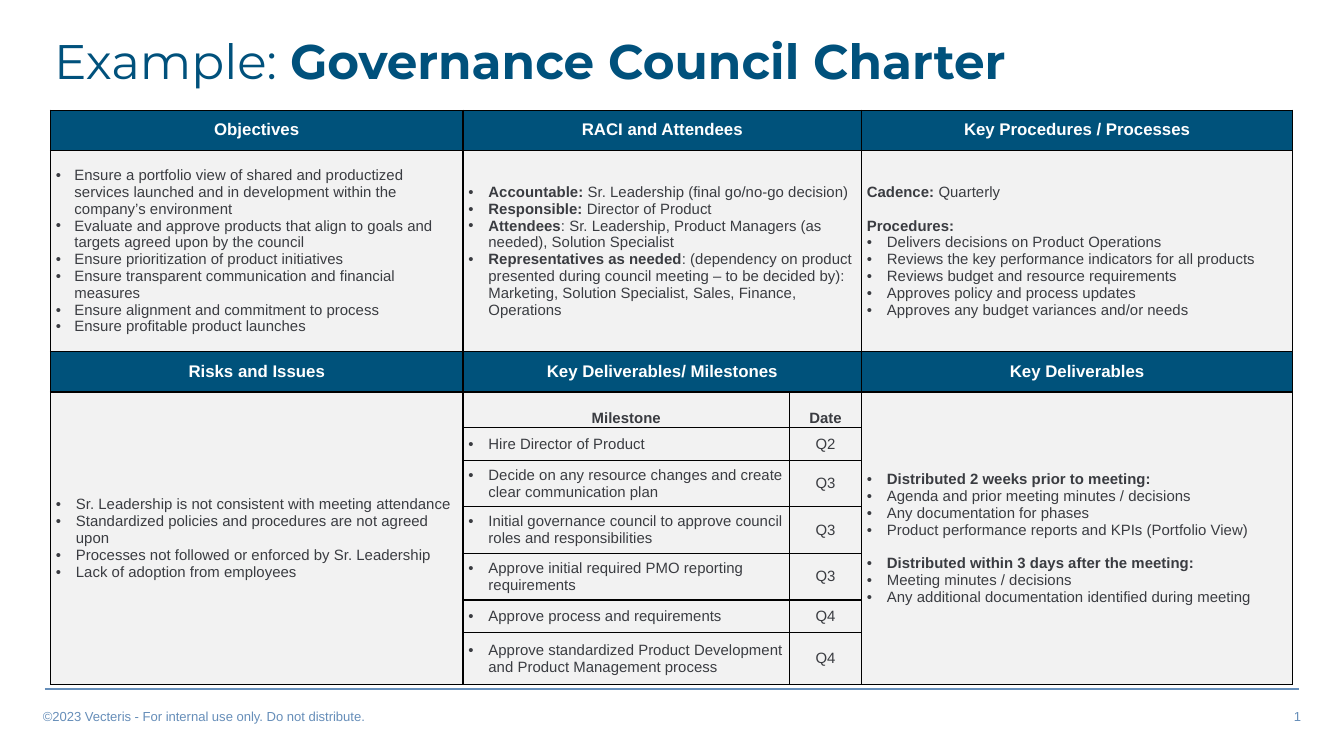
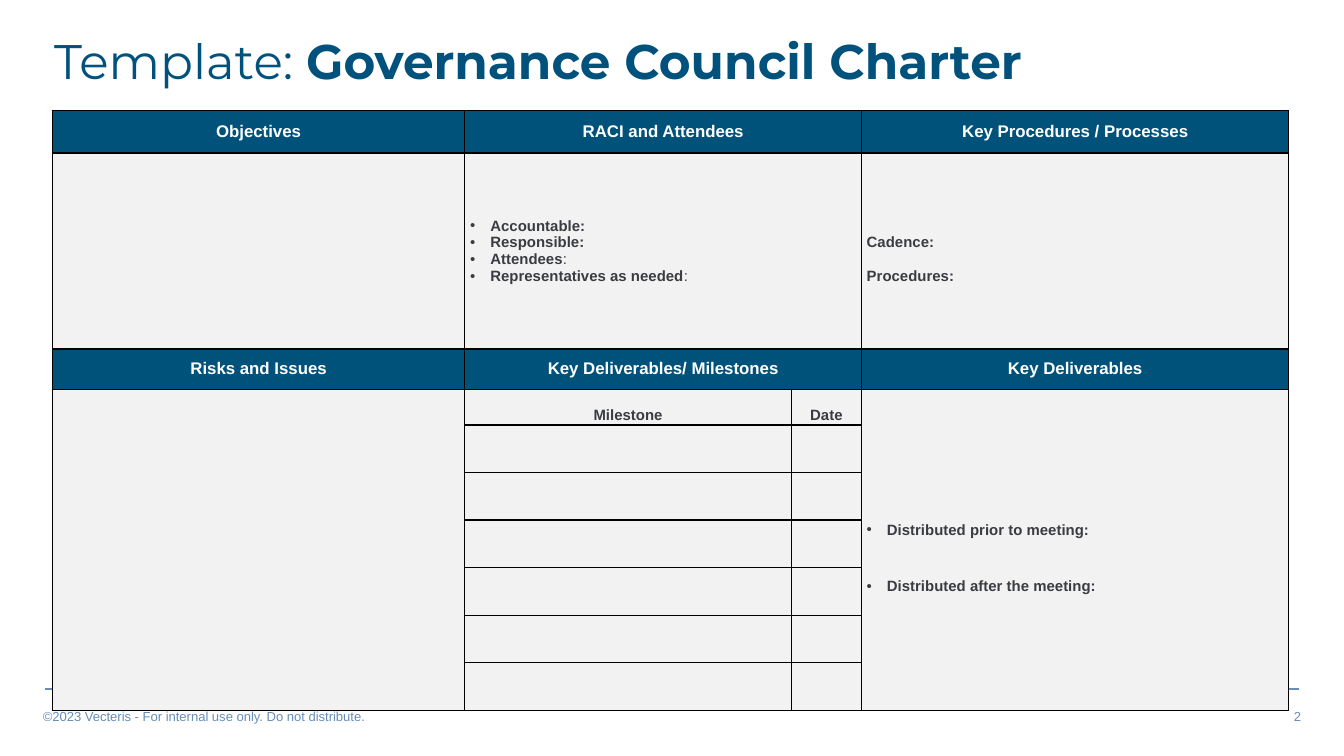
"""Builds a filled governance council charter and its blank template."""
import pptx
import pptx.util
import pptx.dml.color
import pptx.enum.shapes
import pptx.enum.text
import pptx.oxml
import pptx.oxml.ns
from lxml import etree

Pt = pptx.util.Pt
RGBColor = pptx.dml.color.RGBColor
ALIGN = pptx.enum.text.PP_ALIGN
ANCHOR = pptx.enum.text.MSO_ANCHOR
qn = pptx.oxml.ns.qn

TITLE = RGBColor(0x00, 0x51, 0x7C)
BAND = RGBColor(0x00, 0x52, 0x7B)
RULE = RGBColor(0x66, 0x8E, 0xB9)
BODY = RGBColor(0xF2, 0xF2, 0xF2)
INK = RGBColor(0x3A, 0x3C, 0x41)
WHITE = RGBColor(0xFF, 0xFF, 0xFF)
BLACK = RGBColor(0x00, 0x00, 0x00)

FOOTER = "©2023 Vecteris - For internal use only. Do not distribute."
BANDS = {
    0: ["Objectives", "RACI and Attendees", "Key Procedures / Processes"],
    2: ["Risks and Issues", "Key Deliverables/ Milestones", "Key Deliverables"],
}
COLUMNS = [0, 1, 3]
INSET = 2.88
HANG = 10.8


def add_run(p, text, size, color, bold=False, font="Arial"):
    r = p.add_run()
    r.text = text
    r.font.size = Pt(size)
    r.font.name = font
    r.font.bold = bold
    r.font.color.rgb = color


def write_cell(cell, paras, hang=0, align=ALIGN.LEFT):
    """Each paragraph is (bold text, plain text, bulleted, space before)."""
    tf = cell.text_frame
    for i, (bold, plain, bulleted, gap) in enumerate(paras):
        p = tf.paragraphs[0] if i == 0 else tf.add_paragraph()
        p.alignment = align
        if gap:
            p.space_before = Pt(gap)
        if bulleted:
            pPr = p._p.get_or_add_pPr()
            pPr.set("marL", str(Pt(hang)))
            pPr.set("indent", str(-Pt(hang)))
            clr = etree.SubElement(pPr, qn("a:buClr"))
            etree.SubElement(clr, qn("a:srgbClr")).set("val", str(INK))
            etree.SubElement(pPr, qn("a:buFont")).set("typeface", "Arial")
            etree.SubElement(pPr, qn("a:buChar")).set("char", "•")
        if bold:
            add_run(p, bold, 8, INK, True)
        if plain:
            add_run(p, plain, 8, INK)


charters = [
    {
        "title": "Example: ",
        "title_width": 551.5,
        "left": 27,
        "widths": [221, 175, 38.5, 231],
        "heights": [21.5, 108, 21.5, 18, 17.5, 23.5, 23.5, 23.5, 17.5, 28],
        "objectives": [("", text, True, 0) for text in [
            "Ensure a portfolio view of shared and productized services launched "
            "and in development within the company’s environment",
            "Evaluate and approve products that align to goals and targets agreed "
            "upon by the council",
            "Ensure prioritization of product initiatives",
            "Ensure transparent communication and financial measures",
            "Ensure alignment and commitment to process",
            "Ensure profitable product launches",
        ]],
        "raci": [
            ("Accountable: ", "Sr. Leadership (final go/no-go decision)", True, 0),
            ("Responsible: ", "Director of Product", True, 0),
            ("Attendees", ": Sr. Leadership, Product Managers (as needed), "
             "Solution Specialist", True, 0),
            ("Representatives as needed", ": (dependency on product presented "
             "during council meeting – to be decided by): Marketing, Solution "
             "Specialist, Sales, Finance, Operations", True, 0),
        ],
        "procedures": [
            ("Cadence: ", "Quarterly", False, 0),
            ("Procedures:", "", False, 9),
            ("", "Delivers decisions on Product Operations", True, 0),
            ("", "Reviews the key performance indicators for all products", True, 0),
            ("", "Reviews budget and resource requirements", True, 0),
            ("", "Approves policy and process updates", True, 0),
            ("", "Approves any budget variances and/or needs", True, 0),
        ],
        "risks": [("", text, True, 0) for text in [
            "Sr. Leadership is not consistent with meeting attendance",
            "Standardized policies and procedures are not agreed upon",
            "Processes not followed or enforced by Sr. Leadership",
            "Lack of adoption from employees",
        ]],
        "deliverables": [
            ("Distributed 2 weeks prior to meeting:", "", True, 0),
            ("", "Agenda and prior meeting minutes / decisions", True, 0),
            ("", "Any documentation for phases", True, 0),
            ("", "Product performance reports and KPIs (Portfolio View)", True, 0),
            ("Distributed within 3 days after the meeting:", "", True, 9),
            ("", "Meeting minutes / decisions", True, 0),
            ("", "Any additional documentation identified during meeting", True, 0),
        ],
        "milestones": [
            ("Hire Director of Product", "Q2"),
            ("Decide on any resource changes and create clear communication plan", "Q3"),
            ("Initial governance council to approve council roles and "
             "responsibilities", "Q3"),
            ("Approve initial required PMO reporting requirements", "Q3"),
            ("Approve process and requirements", "Q4"),
            ("Approve standardized Product Development and Product Management "
             "process", "Q4"),
        ],
        "right_top_inset": INSET,
    },
    {
        "title": "Template: ",
        "title_width": 538,
        "left": 28,
        "widths": [221, 175, 37.5, 229],
        "heights": [23, 105, 21.5, 18] + [25.5] * 6,
        "objectives": [],
        "raci": [
            ("Accountable:", "", True, 0),
            ("Responsible:", "", True, 0),
            ("Attendees", ":", True, 0),
            ("Representatives as needed", ":", True, 0),
        ],
        "procedures": [
            ("Cadence:", "", False, 0),
            ("Procedures:", "", False, 9),
        ],
        "risks": [],
        "deliverables": [
            ("Distributed prior to meeting:", "", True, 0),
            ("Distributed after the meeting:", "", True, 21.5),
        ],
        "milestones": [],
        "right_top_inset": 12,
    },
]

prs = pptx.Presentation()
prs.slide_width = Pt(720)
prs.slide_height = Pt(405)

for number, charter in enumerate(charters, 1):
    s = prs.slides.add_slide(prs.slide_layouts[6])

    rule = s.shapes.add_connector(
        pptx.enum.shapes.MSO_CONNECTOR.STRAIGHT, Pt(24), Pt(369), Pt(696), Pt(369))
    rule.line.color.rgb = RULE
    rule.line.width = Pt(1)
    etree.SubElement(rule._element.spPr, qn("a:effectLst"))

    title_runs = [(charter["title"], 26, TITLE, False, "Montserrat"),
                  ("Governance Council Charter", 26, TITLE, True, "Montserrat")]
    for left, top, width, height, align, anchor, runs in [
        (18, 377, 288, 14, ALIGN.LEFT, ANCHOR.MIDDLE, [(FOOTER, 7, RULE)]),
        (414, 377, 288, 14, ALIGN.RIGHT, ANCHOR.MIDDLE, [(str(number), 7, RULE)]),
        (24, 17.5, charter["title_width"], 41, ALIGN.LEFT, ANCHOR.TOP, title_runs),
    ]:
        sp = s.shapes.add_textbox(Pt(left), Pt(top), Pt(width), Pt(height))
        tf = sp.text_frame
        tf.word_wrap = True
        tf.vertical_anchor = anchor
        tf.margin_left = tf.margin_right = Pt(5)
        tf.margin_top = tf.margin_bottom = Pt(INSET)
        p = tf.paragraphs[0]
        p.alignment = align
        for run in runs:
            add_run(p, *run)
    p.line_spacing = 0.9

    widths, heights = charter["widths"], charter["heights"]
    table = s.shapes.add_table(
        len(heights), len(widths), Pt(charter["left"]), Pt(59),
        Pt(sum(widths)), Pt(sum(heights))).table
    table.first_row = table.horz_banding = False
    for column, width in zip(table.columns, widths):
        column.width = Pt(width)
    for row, height in zip(table.rows, heights):
        row.height = Pt(height)

    for i, row in enumerate(table.rows):
        for cell in row.cells:
            tcPr = cell._tc.get_or_add_tcPr()
            for side in ("a:lnL", "a:lnR", "a:lnT", "a:lnB"):
                ln = etree.SubElement(tcPr, qn(side))
                ln.set("w", str(Pt(0.75)))
                fill = etree.SubElement(ln, qn("a:solidFill"))
                etree.SubElement(fill, qn("a:srgbClr")).set("val", str(BLACK))
            cell.fill.solid()
            cell.fill.fore_color.rgb = BAND if i in BANDS else BODY
            cell.vertical_anchor = ANCHOR.MIDDLE
            inset = 0 if i in BANDS or i == 3 else INSET
            cell.margin_left = cell.margin_right = Pt(INSET if inset else 0)
            cell.margin_top = cell.margin_bottom = Pt(
                1 if i > 3 and not charter["milestones"] else inset)

    for i in range(3):
        table.cell(i, 1).merge(table.cell(i, 2))
    for j in (0, 3):
        cell = table.cell(3, j)
        cell.merge(table.cell(9, j))
        cell.margin_left = cell.margin_right = Pt(INSET)
        cell.margin_top = cell.margin_bottom = Pt(INSET)
    for i in (1, 3):
        table.cell(i, 3).margin_top = Pt(charter["right_top_inset"])

    for i, heads in BANDS.items():
        for j, head in zip(COLUMNS, heads):
            p = table.cell(i, j).text_frame.paragraphs[0]
            p.alignment = ALIGN.CENTER
            add_run(p, head, 9, WHITE, True)

    write_cell(table.cell(1, 0), charter["objectives"], 10)
    write_cell(table.cell(1, 1), charter["raci"], HANG)
    write_cell(table.cell(1, 3), charter["procedures"], HANG)
    write_cell(table.cell(3, 0), charter["risks"], HANG)
    write_cell(table.cell(3, 3), charter["deliverables"], HANG)
    for j, head in enumerate(["Milestone", "Date"], 1):
        cell = table.cell(3, j)
        write_cell(cell, [(head, "", False, 0)], align=ALIGN.CENTER)
        cell.text_frame.paragraphs[0].line_spacing = 2.0
    for i, (milestone, date) in enumerate(charter["milestones"], 4):
        write_cell(table.cell(i, 1), [("", milestone, True, 0)], HANG)
        write_cell(table.cell(i, 2), [("", date, False, 0)], align=ALIGN.CENTER)

prs.save("out.pptx")
